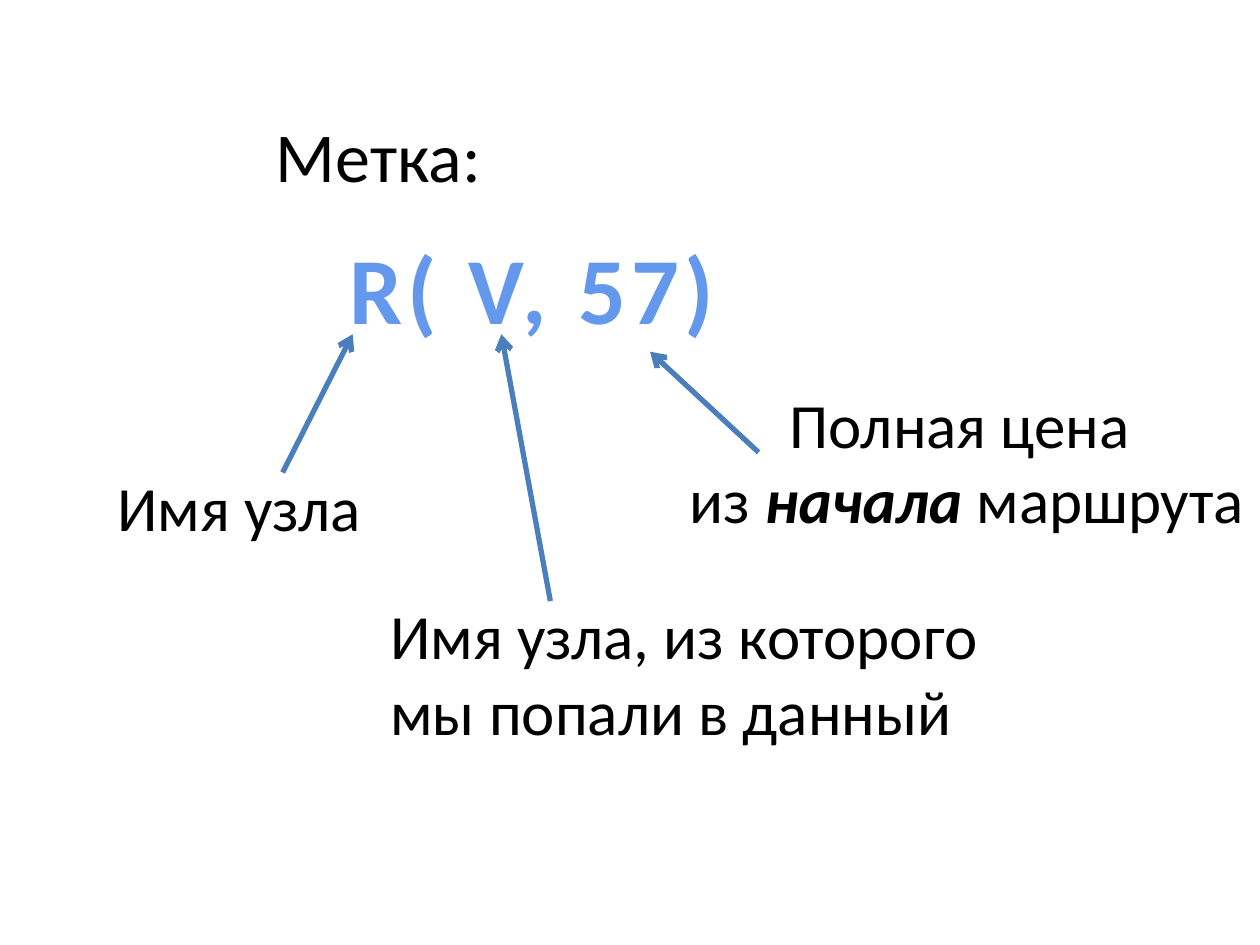
import pptx
import pptx.dml.color
import pptx.enum.dml
import pptx.enum.shapes
import pptx.enum.text
import pptx.oxml
import pptx.util
from dataclasses import dataclass
from lxml import etree

Pt = pptx.util.Pt
RGB = pptx.dml.color.RGBColor.from_string
ALIGN = pptx.enum.text.PP_ALIGN
DRAWING_NS = 'xmlns:a="http://schemas.openxmlformats.org/drawingml/2006/main"'


@dataclass(frozen=True)
class Theme:
    font: str = "Calibri"
    text: str = "000000"
    arrow: str = "4B7EBC"
    formula_top: str = "6398ED"
    formula_bottom: str = "265EA0"
    formula_outline: str = "F4F6F9"
    title_size: int = 40
    formula_size: int = 54
    label_size: int = 36


theme = Theme()


def fill_frame(shape, box, runs, size, align):
    """Place a text shape and write its (text, emphasised) runs."""
    shape.left, shape.top, shape.width, shape.height = map(Pt, box)
    frame = shape.text_frame
    frame.word_wrap = False
    frame.auto_size = pptx.enum.text.MSO_AUTO_SIZE.SHAPE_TO_FIT_TEXT
    frame.vertical_anchor = pptx.enum.text.MSO_ANCHOR.TOP
    paragraph = frame.paragraphs[0]
    paragraph.alignment = align
    paragraph.font.name = theme.font
    paragraph.font.size = Pt(size)
    paragraph.font.color.rgb = RGB(theme.text)
    for text, emphasised in runs:
        for index, line in enumerate(text.split("\n")):
            if index:
                paragraph.add_line_break()
            run = paragraph.add_run()
            run.text = line
            run.font.name = theme.font
            run.font.size = Pt(size)
            run.font.color.rgb = RGB(theme.text)
            if emphasised:
                run.font.bold = run.font.italic = True
    return paragraph


presentation = pptx.Presentation()
presentation.slide_width, presentation.slide_height = Pt(720), Pt(540)
slide = presentation.slides.add_slide(presentation.slide_layouts[5])

# Title
fill_frame(slide.shapes.title, (150.5, 60.5, 142, 55.5),
           [("Метка:", False)], theme.title_size, ALIGN.LEFT)

# Formula with gradient letters, thin outline and wide spacing
formula = fill_frame(slide.shapes.add_textbox(0, 0, 0, 0), (190, 128, 228, 72.7),
                     [("R( V, 57)", False)], theme.formula_size, ALIGN.CENTER)
letters = formula.runs[0].font
letters.bold = True
letters.fill.gradient()
letters.fill.gradient_angle = 270
stops = ((0.1, theme.formula_top), (0.75, theme.formula_bottom))
for stop, (position, color) in zip(letters.fill.gradient_stops, stops):
    stop.position = position
    stop.color.rgb = RGB(color)
letter_properties = formula.runs[0]._r.get_or_add_rPr()
letter_properties.set("spc", "300")
letter_properties.insert(0, pptx.oxml.parse_xml(
    f'<a:ln {DRAWING_NS} w="11430"><a:solidFill>'
    f'<a:srgbClr val="{theme.formula_outline}"/></a:solidFill></a:ln>'))

# Explanations of the formula's parts
labels = [
    ((60, 264, 155.5, 51), [("Имя узла", False)], ALIGN.LEFT),
    ((216, 337.5, 362, 94.5),
     [("Имя узла, из которого \nмы попали в данный", False)], ALIGN.LEFT),
    ((385, 216.5, 335, 94.5),
     [("Полная цена \nиз ", False), ("начала", True), (" маршрута", False)],
     ALIGN.CENTER),
]
for box, runs, align in labels:
    fill_frame(slide.shapes.add_textbox(0, 0, 0, 0), box, runs, theme.label_size, align)

# Arrows from the explanations to the formula
arrows = [(161.5, 270, 201.5, 191), (314.5, 343.5, 286.5, 191), (433.5, 258.5, 371.5, 201)]
for ends in arrows:
    arrow = slide.shapes.add_connector(
        pptx.enum.shapes.MSO_CONNECTOR.STRAIGHT, *map(Pt, ends))
    arrow.line.color.rgb = RGB(theme.arrow)
    arrow.line.width = Pt(3)
    arrow.line._get_or_add_ln().append(
        pptx.oxml.parse_xml(f'<a:tailEnd {DRAWING_NS} type="arrow"/>'))
    arrow._element.spPr.append(pptx.oxml.parse_xml(f"<a:effectLst {DRAWING_NS}/>"))

presentation.save("out.pptx")
